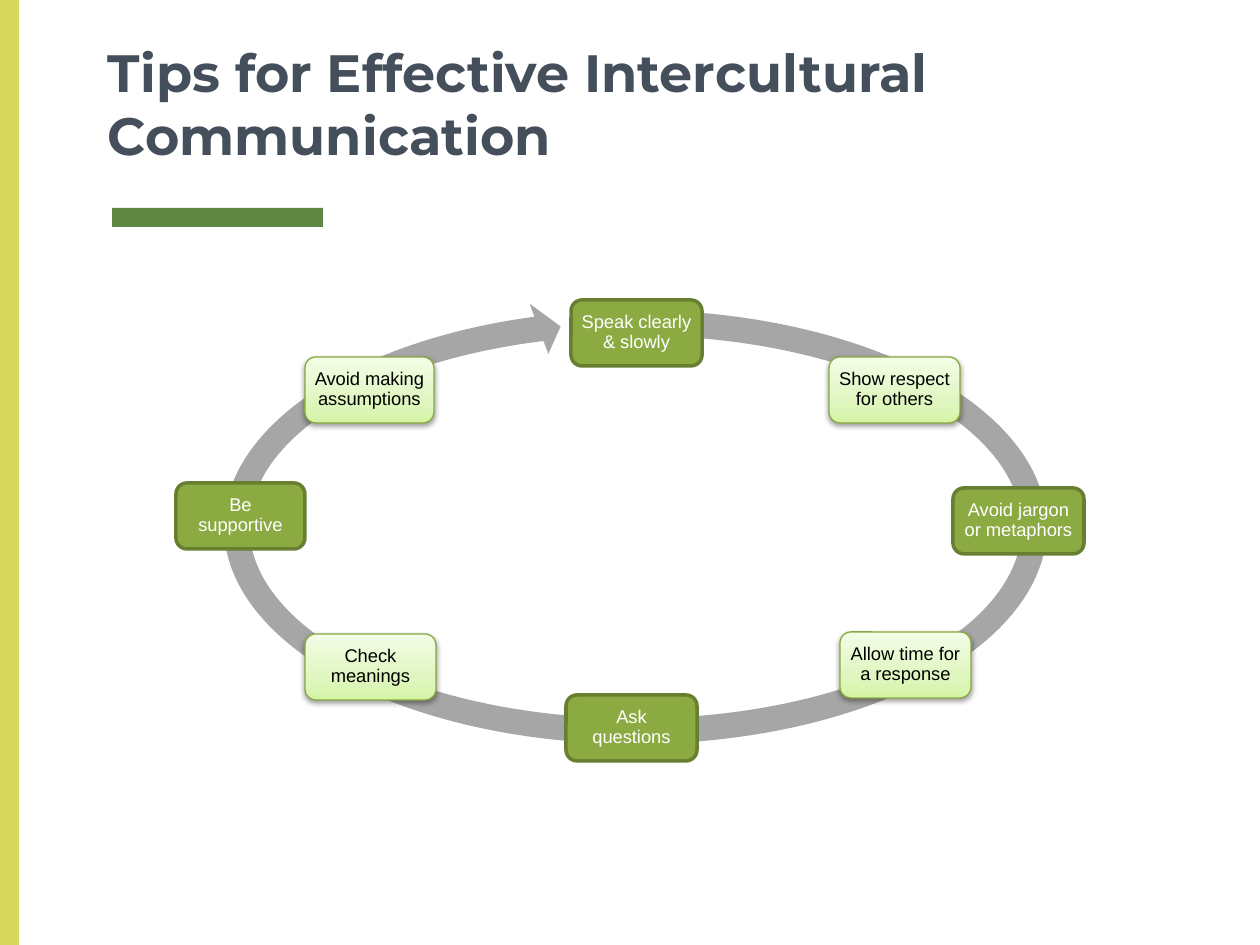
import lxml.etree
import pptx
import pptx.dml.color
import pptx.enum.shapes
import pptx.enum.text
import pptx.oxml
import pptx.oxml.ns
import pptx.util

PX = 914400 / 126
SHAPES = pptx.enum.shapes.MSO_SHAPE
ALIGN = pptx.enum.text.PP_ALIGN
ANCHOR = pptx.enum.text.MSO_ANCHOR
GRADIENT = [(0, "D5F4A6"), (35, "E0F6C1"), (100, "F3FDE7")]
TIPS = [
    ("Speak clearly & slowly", 571, 300, 131),
    ("Show respect for others", 829, 357, 131),
    ("Avoid jargon or metaphors", 953, 488, 131),
    ("Allow time for a response", 840, 632, 131),
    ("Ask questions", 566, 695, 131),
    ("Check meanings", 305, 634, 131),
    ("Be supportive", 176, 483, 129),
    ("Avoid making assumptions", 305, 357, 129),
]


def px(length):
    return pptx.util.Emu(round(length * PX))


def colour(value):
    return pptx.dml.color.RGBColor.from_string(value)


def element(parent, tag, **attributes):
    return lxml.etree.SubElement(parent, pptx.oxml.ns.qn(tag), attributes)


def write(frame, text, *, font, size, ink, bold=False, align=ALIGN.LEFT,
          anchor=ANCHOR.MIDDLE, margin=6, spacing=1.0):
    frame.word_wrap = True
    frame.auto_size = pptx.enum.text.MSO_AUTO_SIZE.NONE
    frame.vertical_anchor = anchor
    frame.margin_left = frame.margin_right = px(margin)
    frame.margin_top = frame.margin_bottom = px(margin)
    frame.text = text
    paragraph = frame.paragraphs[0]
    paragraph.alignment = align
    paragraph.line_spacing = spacing
    paragraph.font.name = font
    paragraph.font.size = pptx.util.Pt(size)
    paragraph.font.bold = bold
    paragraph.font.color.rgb = colour(ink)


def add_block(slide, kind, left, top, width, height, fill):
    block = slide.shapes.add_shape(kind, px(left), px(top), px(width), px(height))
    block.shadow.inherit = False
    block.fill.solid()
    block.fill.fore_color.rgb = colour(fill)
    block.line.fill.background()
    return block


def outline(block, ink, points):
    block.line.color.rgb = colour(ink)
    block.line.width = pptx.util.Pt(points)


def shade(block):
    block.fill.gradient()
    block.fill.gradient_angle = 90
    properties = block._element.spPr
    stops = properties.find(".//" + pptx.oxml.ns.qn("a:gsLst"))
    stops.clear()
    for position, tint in GRADIENT:
        stop = element(stops, "a:gs", pos=str(position * 1000))
        element(stop, "a:srgbClr", val=tint)
    effects = properties.find(pptx.oxml.ns.qn("a:effectLst"))
    shadow = element(effects, "a:outerShdw", blurRad="40000", dist="20000",
                     dir="5400000", rotWithShape="0")
    black = element(shadow, "a:srgbClr", val="000000")
    element(black, "a:alpha", val="38000")


def add_title(slide, text):
    title = slide.shapes.title
    title.left, title.top, title.width, title.height = map(px, (96, 0, 1070, 178))
    write(title.text_frame, text, font="Montserrat", size=30, ink="454F5B",
          bold=True, anchor=ANCHOR.BOTTOM, margin=12)


def add_cycle_arrow(slide):
    arrow = add_block(slide, SHAPES.CIRCULAR_ARROW, 210, 296, 851, 462, "A6A6A6")
    for index, thousandths in enumerate((55, 3307, 146423, 168782, 58)):
        arrow.adjustments[index] = thousandths / 1000


def add_tip(slide, text, left, top, width, pale):
    tip = add_block(slide, SHAPES.ROUNDED_RECTANGLE, left, top, width, 66, "8BAB42")
    if pale:
        outline(tip, "89AA3E", 0.75)
        shade(tip)
    else:
        outline(tip, "677F31", 2)
    write(tip.text_frame, text, font="Arial", size=10.5,
          ink="000000" if pale else "FFFFFF", align=ALIGN.CENTER, spacing=0.9)


def main():
    deck = pptx.Presentation()
    deck.slide_width, deck.slide_height = px(1260), px(945)
    slide = deck.slides.add_slide(deck.slide_layouts.get_by_name("Title Only"))
    add_block(slide, SHAPES.RECTANGLE, 112, 208, 211, 19, "608643")
    add_block(slide, SHAPES.RECTANGLE, 0, 0, 19, 945, "D5D85A")
    add_title(slide, "Tips for Effective Intercultural\vCommunication")
    add_cycle_arrow(slide)
    for index, (text, left, top, width) in enumerate(TIPS):
        add_tip(slide, text, left, top, width, pale=index % 2 == 1)
    deck.save("out.pptx")


if __name__ == "__main__":
    main()
